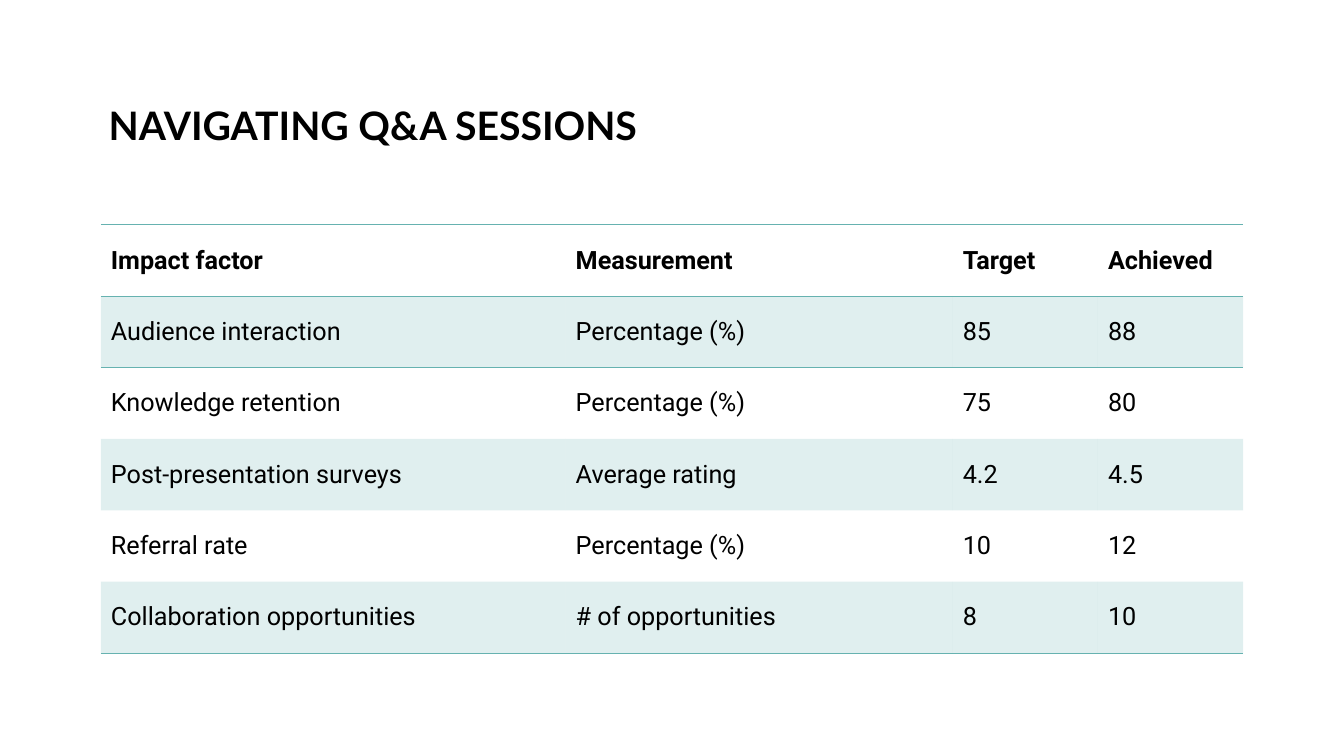
"""Build the Q&A sessions slide with its table of impact factors."""
import lxml.etree
import pptx
import pptx.dml.color
import pptx.enum.text
import pptx.oxml
import pptx.oxml.ns
import pptx.util
from pptx.util import Inches

BLACK = pptx.dml.color.RGBColor(0x00, 0x00, 0x00)
TEAL = pptx.dml.color.RGBColor(0x66, 0xB2, 0xB0)
NO_STYLE = "{2D5ABB26-0587-4C30-8999-92F81FD0307C}"
COLUMN_WIDTHS = [4.61, 3.84, 1.44, 1.44]
ROW_HEIGHT = 4.25 / 6
RESULTS = [
    ["Impact factor", "Measurement", "Target", "Achieved"],
    ["Audience interaction", "Percentage (%)", "85", "88"],
    ["Knowledge retention", "Percentage (%)", "75", "80"],
    ["Post-presentation surveys", "Average rating", "4.2", "4.5"],
    ["Referral rate", "Percentage (%)", "10", "12"],
    ["Collaboration opportunities", "# of opportunities", "8", "10"],
]
RULED_EDGES = {0: ["lnT", "lnB"], 1: ["lnT"], len(RESULTS) - 1: ["lnB"]}


def style_text(paragraph, font_name, size, bold):
    paragraph.font.name = font_name
    paragraph.font.size = pptx.util.Pt(size)
    paragraph.font.bold = bold
    paragraph.font.color.rgb = BLACK


def add_rule(cell, edge):
    rule = pptx.oxml.parse_xml(
        f'<a:{edge} {pptx.oxml.ns.nsdecls("a")} w="12700"><a:solidFill>'
        f'<a:srgbClr val="{TEAL}"/></a:solidFill></a:{edge}>'
    )
    cell._tc.get_or_add_tcPr().append(rule)


deck = pptx.Presentation()
deck.slide_width = Inches(13.33)
deck.slide_height = Inches(7.5)
slide = deck.slides.add_slide(deck.slide_layouts[6])

title = slide.shapes.add_textbox(Inches(0.98), Inches(0.08), Inches(11.38), Inches(1.45)).text_frame
title.word_wrap = True
title.vertical_anchor = pptx.enum.text.MSO_ANCHOR.BOTTOM
heading = title.paragraphs[0]
heading.text = "NAVIGATING Q&A SESSIONS"
heading.line_spacing = 0.9
style_text(heading, "Lato", 28, True)

results_frame = slide.shapes.add_table(
    len(RESULTS), len(COLUMN_WIDTHS),
    Inches(1), Inches(2.23), Inches(sum(COLUMN_WIDTHS)), Inches(ROW_HEIGHT * len(RESULTS)),
)
results_table = results_frame.table
results_table.horz_banding = False
for style_id in results_frame.element.iter(pptx.oxml.ns.qn("a:tableStyleId")):
    style_id.text = NO_STYLE

for column, width in zip(results_table.columns, COLUMN_WIDTHS):
    column.width = Inches(width)

for row_index, entries in enumerate(RESULTS):
    results_table.rows[row_index].height = Inches(ROW_HEIGHT)
    for column_index, entry in enumerate(entries):
        cell = results_table.cell(row_index, column_index)
        cell.text = entry
        cell.vertical_anchor = pptx.enum.text.MSO_ANCHOR.MIDDLE
        style_text(cell.text_frame.paragraphs[0], "Roboto", 18, row_index == 0)
        for edge in RULED_EDGES.get(row_index, []):
            add_rule(cell, edge)
        if row_index % 2:
            cell.fill.solid()
            cell.fill.fore_color.rgb = TEAL
            tint = cell._tc.tcPr.find("a:solidFill/a:srgbClr", pptx.oxml.ns._nsmap)
            lxml.etree.SubElement(tint, pptx.oxml.ns.qn("a:alpha"), val="20000")
        else:
            cell.fill.background()

deck.save("out.pptx")
